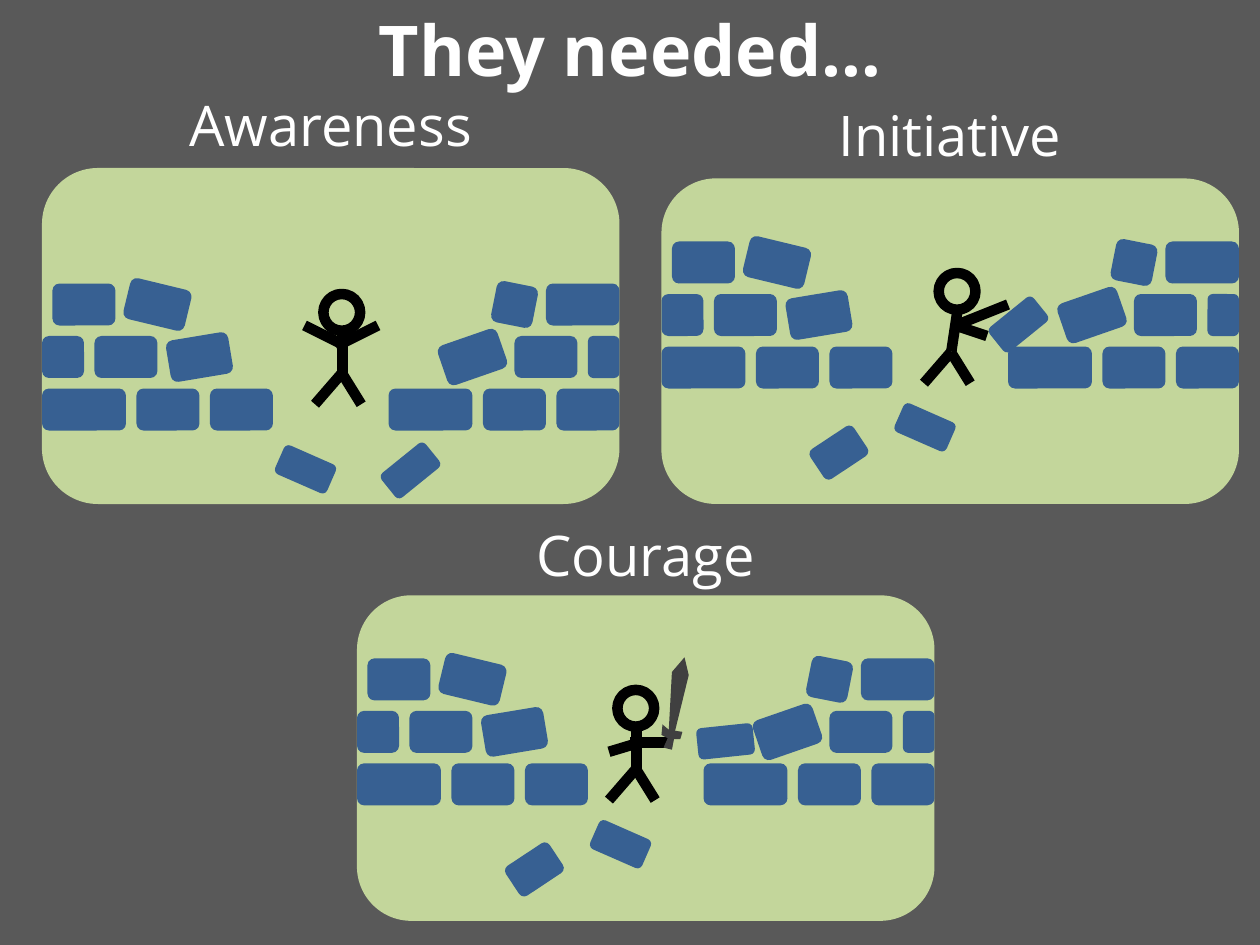
"""Build the 'They needed…' slide: three scenes of a stick figure at a broken wall."""
import pptx
import pptx.dml.color
import pptx.enum.shapes
import pptx.enum.text
import pptx.oxml
import pptx.util

PX = 7620
KINDS = pptx.enum.shapes.MSO_SHAPE
STRAIGHT = pptx.enum.shapes.MSO_CONNECTOR.STRAIGHT
NO_EFFECTS = '<a:effectLst xmlns:a="http://schemas.openxmlformats.org/drawingml/2006/main"/>'
TITLE_FORMAT = {"name": "Open Sans", "size": pptx.util.Pt(40), "bold": True}
CAPTION_FORMAT = {"name": "Open Sans", "size": pptx.util.Pt(32)}
BRICK_HEIGHT = 40
WALL_ROWS = [
    (100, [(0, 80, 0), (90, 60, 0), (160, 60, 0), (330, 80, 0), (420, 60, 0), (490, 60, 0)]),
    (50, [(0, 40, 0), (50, 60, 0), (120, 60, -9.4), (380, 60, -19.1), (450, 60, 0), (520, 30, 0)]),
    (0, [(10, 60, 0), (80, 60, 13.6), (430, 40, 11.2), (480, 70, 0)]),
]
WALL = [(x, y, width, BRICK_HEIGHT, turn) for y, row in WALL_ROWS for x, width, turn in row]
FALLEN = (224, 162, 54, 30, 23.7)
LEGS = [(-26, 30, 0, 0), (0, 1, 18, 30)]
SCENES = [
    {"caption": "Awareness", "caption_top": 80, "panel": (40, 160, 550, 320), "wall_top": 270,
     "loose": [(324, 163, 54, 30, -39)], "hip": (326, 355), "neck": (0, -40),
     "arms": [(4, -25, -36, -45), (-6, -25, 34, -45)]},
    {"caption": "Initiative", "caption_top": 90, "panel": (630, 170, 550, 310), "wall_top": 230,
     "loose": [(144, 184, 50, 34, -33.5), (313, 64, 54, 30, -39)], "hip": (906, 335), "neck": (6, -40),
     "arms": [(4, -25, 34, -15), (4, -25, 54, -45)]},
    {"caption": "Courage", "caption_top": 490, "panel": (340, 567, 550, 310), "wall_top": 627,
     "loose": [(144, 184, 50, 34, -33.5), (324, 64, 54, 30, -6)], "hip": (606, 732), "neck": (0, -40),
     "arms": [(4, -25, -26, -16), (-6, -25, 34, -25)]},
]
SWORD = [(637, 695), (640, 640), (652, 626), (656, 643), (643, 696), (650, 697), (648, 704),
         (642, 704), (640, 714), (632, 712), (636, 703), (630, 700), (631, 690)]


def paint(target, color):
    """Give a fill or line format a solid hex colour."""
    target.solid()
    target.fore_color.rgb = pptx.dml.color.RGBColor.from_string(color)


def write(shapes, text, frame, formats):
    """Add a centred white text box."""
    box = shapes.add_textbox(*[value * PX for value in frame])
    box.text_frame.word_wrap = True
    para = box.text_frame.paragraphs[0]
    para.alignment = pptx.enum.text.PP_ALIGN.CENTER
    span = para.add_run()
    span.text = text
    for name, value in formats.items():
        setattr(span.font, name, value)
    paint(span.font.fill, "FFFFFF")


deck = pptx.Presentation()
deck.slide_width, deck.slide_height = 1200 * PX, 900 * PX
page = deck.slides.add_slide(deck.slide_layouts[6])

backdrop = page.shapes.add_shape(KINDS.RECTANGLE, 0, 0, 1200 * PX, 900 * PX)
backdrop.shadow.inherit = False
paint(backdrop.fill, "595959")
backdrop.line.fill.background()

for scene in SCENES:
    group = page.shapes.add_group_shape().shapes
    left, top, width, height = scene["panel"]
    blocks = [(left, top, width, height, 0, "C3D69B")]
    for x, y, brick_width, brick_height, turn in WALL + [FALLEN] + scene["loose"]:
        blocks.append((left + x, scene["wall_top"] + y, brick_width, brick_height, turn, "376092"))
    for *frame, turn, color in blocks:
        block = group.add_shape(KINDS.ROUNDED_RECTANGLE, *[value * PX for value in frame])
        block.shadow.inherit = False
        block.rotation = turn
        paint(block.fill, color)
        block.line.fill.background()
    write(group, scene["caption"], (left + 100, scene["caption_top"], 350, 77), CAPTION_FORMAT)

    hip_x, hip_y = scene["hip"]
    neck_x, neck_y = scene["neck"]
    for x1, y1, x2, y2 in LEGS + [(0, 0, neck_x, neck_y)] + scene["arms"]:
        ends = (hip_x + x1, hip_y + y1, hip_x + x2, hip_y + y2)
        limb = group.add_connector(STRAIGHT, *[value * PX for value in ends])
        limb.line.width = pptx.util.Pt(6)
        paint(limb.line.fill, "000000")
        limb._element.spPr.append(pptx.oxml.parse_xml(NO_EFFECTS))
    head_frame = (hip_x + neck_x - 18, hip_y + neck_y - 35, 35, 35)
    head = group.add_shape(KINDS.OVAL, *[value * PX for value in head_frame])
    head.shadow.inherit = False
    head.fill.background()
    head.line.width = pptx.util.Pt(6)
    paint(head.line.fill, "000000")

outline = group.build_freeform(*SWORD[0], scale=PX)
outline.add_line_segments(SWORD[1:], close=True)
sword = outline.convert_to_shape()
sword.shadow.inherit = False
paint(sword.fill, "404040")
sword.line.fill.background()

write(page.shapes, "They needed…", (0, 0, 1200, 92), TITLE_FORMAT)
deck.save("out.pptx")
